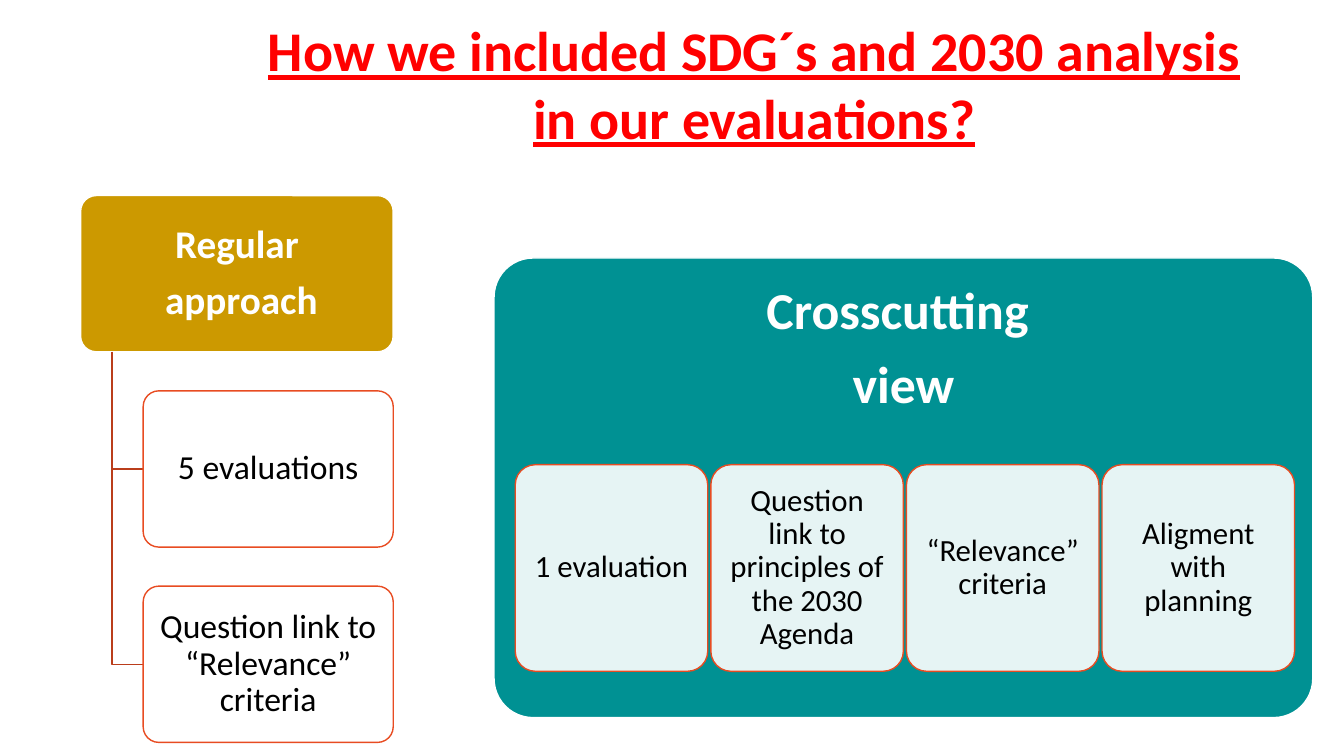
from pptx import Presentation
from pptx import util as u
from pptx.dml.color import RGBColor
from pptx.enum import shapes, text
from lxml import etree

THEME = dict(
    font="Calibri", title="FF0000", gold="CC9900", teal="009193", white="FFFFFF",
    black="000000", edge="E84C22", link="BA3D1B", line=1,
    title_pt=40, panel_pt=37, head_pt=28, item_pt=24, card_pt=22,
)
NS = "http://schemas.openxmlformats.org/drawingml/2006/main"

prs = Presentation()
prs.slide_width, prs.slide_height = u.Inches(13.33), u.Inches(7.5)
s = prs.slides.add_slide(prs.slide_layouts[6])


def write(sp, lines, size, color="white", bold=False, underline=False,
          spacing=0.9, after=0.35, inset=(0.05, 0.03), anchor="MIDDLE"):
    tf = sp.text_frame
    tf.word_wrap = True
    tf.vertical_anchor = text.MSO_ANCHOR[anchor]
    tf.margin_left = tf.margin_right = u.Inches(inset[0])
    tf.margin_top = tf.margin_bottom = u.Inches(inset[1])
    for i, line in enumerate(lines):
        p = tf.paragraphs[0] if i == 0 else tf.add_paragraph()
        p.alignment = text.PP_ALIGN.CENTER
        p.line_spacing = spacing
        p.space_after = u.Pt(round(THEME[size] * after, 1))
        r = p.add_run()
        r.text = line
        r.font.name, r.font.size = THEME["font"], u.Pt(THEME[size])
        r.font.bold, r.font.underline = bold, underline
        r.font.color.rgb = RGBColor.from_string(THEME[color])


def box(x, y, w, h, corner, fill="white", line="edge", opacity=100):
    sp = s.shapes.add_shape(shapes.MSO_SHAPE.ROUNDED_RECTANGLE,
                            *map(u.Inches, (x, y, w, h)))
    sp.shadow.inherit = False
    sp.adjustments[0] = corner
    sp.fill.solid()
    sp.fill.fore_color.rgb = RGBColor.from_string(THEME[fill])
    sp.line.color.rgb = RGBColor.from_string(THEME[line])
    sp.line.width = u.Pt(THEME["line"])
    if opacity < 100:
        clr = sp._element.spPr.find(f"{{{NS}}}solidFill")[0]
        etree.SubElement(clr, f"{{{NS}}}alpha", val=str(opacity * 1000))
    return sp


# Title
title = s.shapes.add_textbox(*map(u.Inches, (2.35, 0.38, 10.26, 0.89)))
write(title, ["How we included SDG´s and 2030 analysis in our evaluations?"],
      "title_pt", color="title", bold=True, underline=True,
      spacing=1.0, after=0, inset=(0.1, 0.05))

# Regular approach: a head with items hanging below it
left, top, head_w, row_h = 0.8, 1.94, 3.1, 1.55
pitch = row_h * 1.25
indent = head_w * 0.2
trunk = left + indent / 2
head = box(left, top, head_w, row_h, 0.1, fill="gold", line="white")
write(head, ["Regular", " approach"], "head_pt", bold=True, inset=(0.06, 0.04))

items = ["5 evaluations", "Question link to “Relevance” criteria"]
for row, item in enumerate(items, start=1):
    y = top + row * pitch
    middle = y + row_h / 2
    fb = s.shapes.build_freeform(u.Inches(trunk), u.Inches(top + row_h))
    fb.add_line_segments([(u.Inches(trunk), u.Inches(middle)),
                          (u.Inches(left + indent), u.Inches(middle))], close=False)
    branch = fb.convert_to_shape()
    branch.shadow.inherit = False
    branch.fill.background()
    branch.line.color.rgb = RGBColor.from_string(THEME["link"])
    branch.line.width = u.Pt(THEME["line"])
    sp = box(left + indent, y, head_w - indent, row_h, 0.1, opacity=90)
    write(sp, [item], "item_pt", color="black")

# Crosscutting view: a panel with a row of cards
panel = box(4.9, 2.56, 8.12, 4.56, 0.085, fill="teal", line="white")
write(panel, ["Crosscutting ", "view"], "panel_pt", bold=True,
      inset=(0.15, 0.15), anchor="TOP")

cards = ["1 evaluation", "Question link to principles of the 2030 Agenda",
         "“Relevance” criteria", "Aligment with planning"]
card_w, card_gap = 1.91, 0.03
for col, card in enumerate(cards):
    sp = box(5.11 + col * (card_w + card_gap), 4.61, card_w, 2.05, 0.105, opacity=90)
    write(sp, [card], "card_pt", color="black", inset=(0.09, 0.09))

prs.save("out.pptx")
